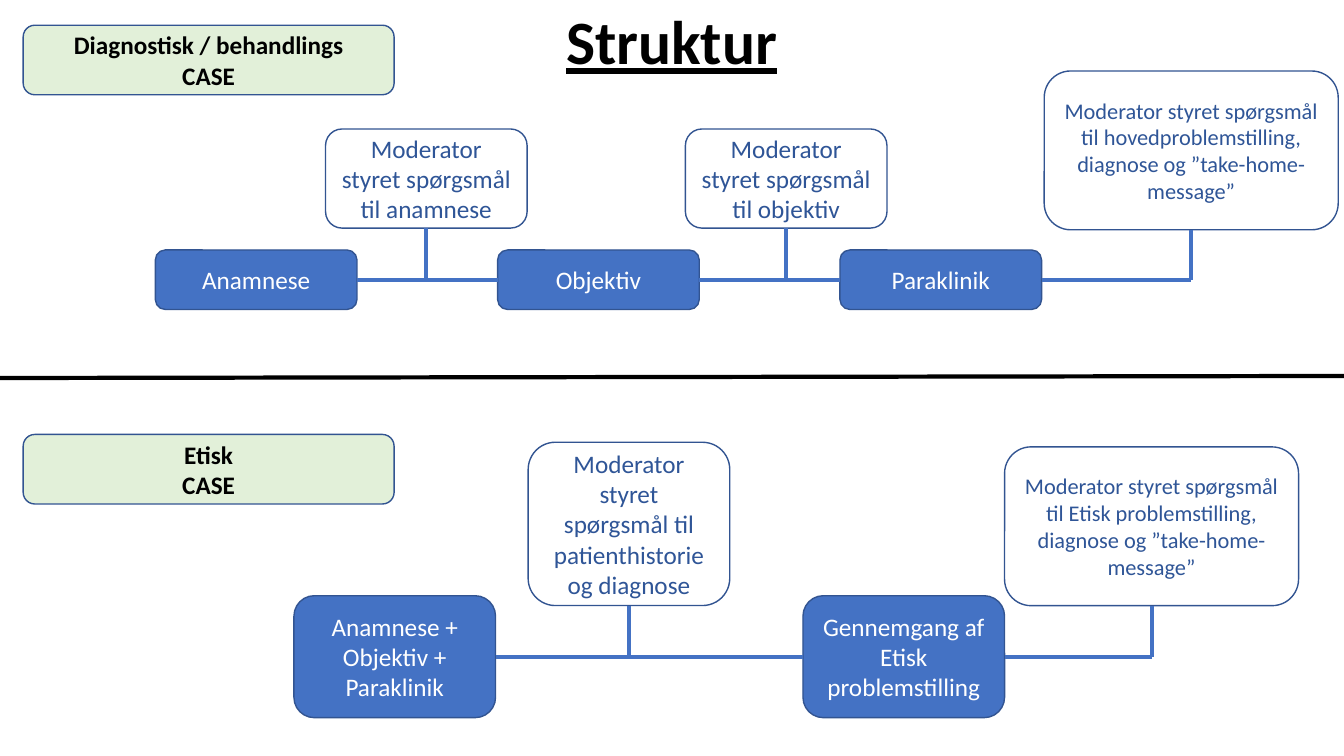
from pptx import Presentation
from pptx.dml.color import RGBColor
from pptx.enum.shapes import MSO_CONNECTOR, MSO_SHAPE
from pptx.enum.text import MSO_ANCHOR, PP_ALIGN
from pptx.oxml.ns import qn
from pptx.util import Inches, Pt
from lxml import etree

ROUND = MSO_SHAPE.ROUNDED_RECTANGLE
STRAIGHT = MSO_CONNECTOR.STRAIGHT
MIDDLE = MSO_ANCHOR.MIDDLE
CENTER = PP_ALIGN.CENTER
TOP, LEFT, BOTTOM, RIGHT = range(4)
COLS, ROWS = 160, 90
CELL = Inches(1 / 12)
STEP_W = 24
BLUE, EDGE, INK = "4472C4", "325491", "2F5597"
GREEN, WHITE, BLACK = "E2F0D9", "FFFFFF", "000000"


def rgb(value):
    """Return the colour for a hex string."""
    return RGBColor.from_string(value)


def cells(*counts):
    """Turn counts of grid cells into lengths."""
    return [round(n * CELL) for n in counts]


def write(tf, text, size, color, bold=False, underline=False):
    """Fill a text frame with centred text in one style."""
    tf.text = text
    tf.word_wrap = True
    tf.vertical_anchor = MIDDLE
    for p in tf.paragraphs:
        p.alignment = CENTER
        for r in p.runs:
            r.font.name = "Calibri"
            r.font.size = Pt(size)
            r.font.bold = bold
            r.font.underline = underline
            r.font.color.rgb = rgb(color)


def add_box(s, box, text, fill, color, size=18, bold=False):
    """Add a rounded box with centred text."""
    sp = s.shapes.add_shape(ROUND, *cells(*box))
    sp.shadow.inherit = False
    sp.fill.solid()
    sp.fill.fore_color.rgb = rgb(fill)
    sp.line.color.rgb = rgb(EDGE)
    sp.line.width = Pt(1)
    write(sp.text_frame, text, size, color, bold)
    return sp


def add_line(s, x1, y1, x2, y2, color=BLUE):
    """Add a straight line between two points given as lengths."""
    line = s.shapes.add_connector(STRAIGHT, x1, y1, x2, y2)
    line.line.color.rgb = rgb(color)
    line.line.width = Pt(3)
    etree.SubElement(line._element.spPr, qn("a:effectLst"))
    return line


def add_title(s, box, text):
    """Add the underlined slide title."""
    tf = s.shapes.add_textbox(*cells(*box)).text_frame
    write(tf, text, 44, BLACK, bold=True, underline=True)
    tf.paragraphs[0].line_spacing = 0.9


def add_case(s, top, tag, tag_y, steps, step_box, pitch, questions):
    """Add one case: its tag, a row of steps, and the questions on its rail."""
    x, y, h = step_box
    step_shapes = [
        add_box(s, (x + i * pitch, top + y, STEP_W, h), text, BLUE, WHITE)
        for i, text in enumerate(steps)
    ]
    question_shapes = [
        add_box(s, (qx, top + qy, qw, qh), text, WHITE, INK, size)
        for text, size, (qx, qy, qw, qh) in questions
    ]
    add_box(s, (2.76, top + tag_y, 44.16, 8.28), tag, GREEN, BLACK, bold=True)

    rail_y = step_shapes[0].top + step_shapes[0].height // 2
    for a, b in zip(step_shapes, step_shapes[1:]):
        rail = add_line(s, a.left + a.width, rail_y, b.left, rail_y)
        rail.begin_connect(a, RIGHT)
        rail.end_connect(b, LEFT)
    for sp in question_shapes:
        mid = sp.left + sp.width // 2
        stem = add_line(s, mid, rail_y, mid, sp.top + sp.height)
        stem.end_connect(sp, BOTTOM)
    last = step_shapes[-1]
    tail = add_line(s, last.left + last.width, rail_y, mid, rail_y)
    tail.begin_connect(last, RIGHT)


def main():
    """Build the slide and save it."""
    prs = Presentation()
    prs.slide_width, prs.slide_height = cells(COLS, ROWS)
    s = prs.slides.add_slide(prs.slide_layouts[6])
    add_title(s, (11, -3.36, 138, 17.4), "Struktur")
    add_case(
        s, 0, "Diagnostisk / behandlings\nCASE", 3,
        ["Anamnese", "Objektiv", "Paraklinik"], (18.5, 29.76, 7.08), 40.75,
        [
            ("Moderator styret spørgsmål til anamnese", 18,
             (38.76, 15.36, STEP_W, 11.8)),
            ("Moderator styret spørgsmål til objektiv", 18,
             (81.6, 15.36, STEP_W, 11.8)),
            ("Moderator styret spørgsmål til hovedproblemstilling, "
             "diagnose og ”take-home-message”", 16,
             (124.32, 8.45, 35, 18.9)),
        ],
    )
    add_case(
        s, ROWS / 2, "Etisk\nCASE", 6.72,
        ["Anamnese + Objektiv + Paraklinik",
         "Gennemgang af Etisk problemstilling"], (35, 25.92, 14.52), 60.6,
        [
            ("Moderator styret spørgsmål til patienthistorie og diagnose", 18,
             (62.88, 7.65, STEP_W, 19.44)),
            ("Moderator styret spørgsmål til Etisk problemstilling, "
             "diagnose og ”take-home-message”", 16,
             (119.6, 8.2, 35, 18.9)),
        ],
    )
    add_line(s, *cells(0, ROWS / 2, COLS, 44.76), BLACK)
    prs.save("out.pptx")


if __name__ == "__main__":
    main()
